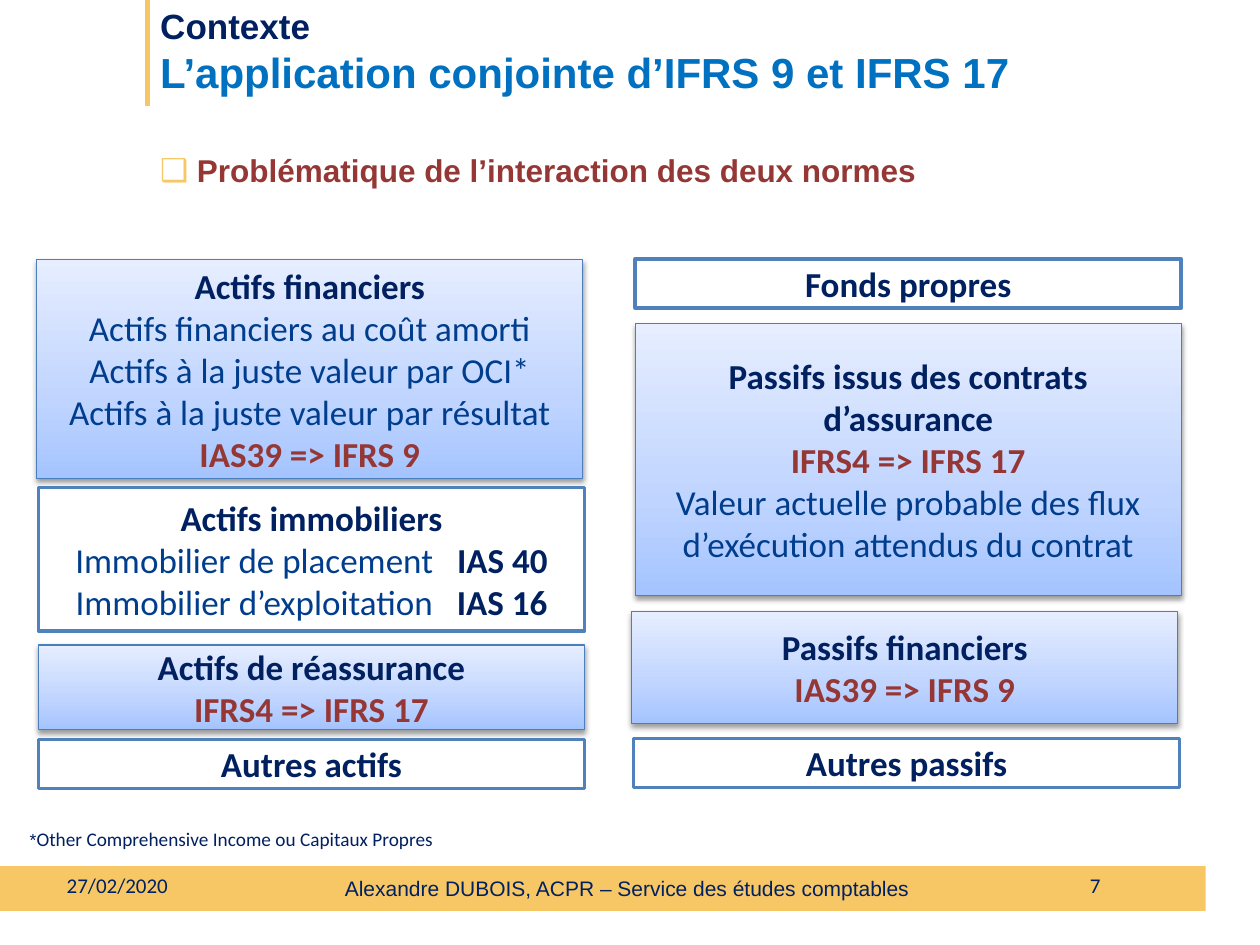
from copy import deepcopy
from dataclasses import dataclass

from lxml import etree
from pptx import Presentation
from pptx.dml.color import RGBColor
from pptx.enum import shapes, text
from pptx.oxml.ns import qn
from pptx.util import Pt


@dataclass(frozen=True)
class Theme:
    navy: str = "002060"
    blue: str = "003D8D"
    sky: str = "0070C0"
    red: str = "953735"
    gold: str = "F7C765"
    white: str = "FFFFFF"
    edge: str = "4F81BD"
    rim: str = "4B7EBC"
    grad: tuple = ((0, "A4C4FF"), (0.35, "BFD4FF"), (1, "E6EEFF"))
    head: str = "Arial"
    body: str = "Calibri"
    title: int = 24
    large: int = 20
    mid: int = 18
    small: int = 12
    note: int = 11
    star: int = 10


T = Theme()


@dataclass(frozen=True)
class Bit:
    """A stretch of text in one style."""
    words: str
    color: str = T.navy
    bold: bool = True
    size: int = T.large
    font: str = T.body
    gap: float = 0  # extra letter spacing


@dataclass(frozen=True)
class Box:
    """A balance sheet block; each line is a tuple of bits."""
    left: float
    top: float
    high: float
    lines: tuple
    shaded: bool = False


def style(run, bit: Bit) -> None:
    font = run.font
    font.name, font.size, font.bold = bit.font, Pt(bit.size), bit.bold
    font.color.rgb = RGBColor.from_string(bit.color)
    if bit.gap:
        run._r.get_or_add_rPr().set("spc", str(round(bit.gap * 100)))


def write(frame, lines: tuple, align=text.PP_ALIGN.LEFT, anchor=text.MSO_ANCHOR.MIDDLE) -> None:
    frame.word_wrap = True
    frame.vertical_anchor = anchor
    for i, line in enumerate(lines):
        para = frame.add_paragraph() if i else frame.paragraphs[0]
        para.alignment = align
        for bit in line:
            run = para.add_run()
            run.text = bit.words
            style(run, bit)


def label(slide, area: tuple, lines: tuple, **opts):
    frame = slide.shapes.add_textbox(*map(Pt, area)).text_frame
    write(frame, lines, **opts)
    return frame


def panel(slide, area: tuple, color: str):
    rect = slide.shapes.add_shape(shapes.MSO_SHAPE.RECTANGLE, *map(Pt, area))
    rect.shadow.inherit = False
    rect.fill.solid()
    rect.fill.fore_color.rgb = RGBColor.from_string(color)
    rect.line.fill.background()
    return rect


def shade(rect) -> None:
    """Three-stop gradient, pale at the top, with a soft shadow below."""
    fill = rect.fill
    fill.gradient()
    fill.gradient_angle = 90
    props = rect._element.spPr
    stops = props.find(".//" + qn("a:gsLst"))
    stops.append(deepcopy(stops[0]))
    for stop, (pos, color) in zip(fill.gradient_stops, T.grad):
        stop.position = pos
        stop.color.rgb = RGBColor.from_string(color)
    glow = etree.SubElement(props.find(qn("a:effectLst")), qn("a:outerShdw"),
                            blurRad=str(Pt(3.1)), dist=str(Pt(1.6)),
                            dir="5400000", rotWithShape="0")
    tint = etree.SubElement(glow, qn("a:srgbClr"), val="000000")
    etree.SubElement(tint, qn("a:alpha"), val="38000")


def block(slide, box: Box) -> None:
    rect = panel(slide, (box.left, box.top, WIDE, box.high), T.white)
    if box.shaded:
        shade(rect)
    rect.line.color.rgb = RGBColor.from_string(T.rim if box.shaded else T.edge)
    rect.line.width = Pt(0.75 if box.shaded else 2)
    write(rect.text_frame, box.lines, align=text.PP_ALIGN.CENTER)


def bullet(para, mark: str, color: str, dent: float) -> None:
    props = para._p.get_or_add_pPr()
    props.set("marL", str(Pt(dent)))
    props.set("indent", str(-Pt(dent)))
    tint = etree.SubElement(props, qn("a:buClr"))
    etree.SubElement(tint, qn("a:srgbClr"), val=color)
    etree.SubElement(props, qn("a:buFont"), typeface=T.head)
    etree.SubElement(props, qn("a:buChar"), char=mark)


def head(words: str) -> tuple:
    return (Bit(words),)


def plain(words: str) -> tuple:
    return (Bit(words, T.blue, False),)


def norm(words: str) -> tuple:
    return (Bit(words, T.red),)


def pair(words: str, code: str) -> tuple:
    return Bit(words, T.blue, False), Bit(" ", T.blue, False, gap=9), Bit(code)


WIDE = 312
BOXES = (
    # Assets
    Box(21, 148.5, 125, (
        head("Actifs financiers"),
        plain("Actifs financiers au coût amorti"),
        plain("Actifs à la juste valeur par OCI*"),
        plain("Actifs à la juste valeur par résultat"),
        norm("IAS39 => IFRS 9")), True),
    Box(22, 278.5, 82, (
        head("Actifs immobiliers"),
        pair("Immobilier de placement", "IAS 40"),
        pair("Immobilier d’exploitation", "IAS 16"))),
    Box(22, 368.5, 48.5, (
        head("Actifs de réassurance"), norm("IFRS4 => IFRS 17")), True),
    Box(22, 422.5, 28, (head("Autres actifs"),)),
    # Liabilities
    Box(363, 148, 28, (head("Fonds propres"),)),
    Box(363, 185, 155.5, (
        head("Passifs issus des contrats d’assurance"),
        norm("IFRS4 => IFRS 17"),
        plain("Valeur actuelle probable des flux d’exécution attendus du contrat")), True),
    Box(361, 349.5, 64, (
        head("Passifs financiers"), norm("IAS39 => IFRS 9")), True),
    Box(362, 422, 28, (head("Autres passifs"),)),
)


def main() -> None:
    deck = Presentation()
    deck.slide_width, deck.slide_height = Pt(720), Pt(540)
    slide = deck.slides.add_slide(deck.slide_layouts[6])

    # Footer band and title rule
    panel(slide, (0, 495, 703, 25.5), T.gold)
    panel(slide, (689, 485.5, 20, 47.5), T.white)
    rule = slide.shapes.add_connector(
        shapes.MSO_CONNECTOR.STRAIGHT, Pt(84.5), Pt(0), Pt(84.5), Pt(60.5))
    rule.line.color.rgb = RGBColor.from_string(T.gold)
    rule.line.width = Pt(2.75)
    etree.SubElement(rule._element.spPr, qn("a:effectLst"))

    # Footer texts
    foot = Bit("Alexandre DUBOIS, ACPR – Service des études comptables",
               bold=False, size=T.small, font=T.head)
    frame = label(slide, (190, 497, 340, 39.5), ((foot,),), anchor=text.MSO_ANCHOR.TOP)
    frame.paragraphs[0].space_before = Pt(2.4)
    date = Bit("27/02/2020", bold=False, size=T.small)
    label(slide, (31, 491, 168, 29), ((date,),))
    page = Bit("7", bold=False, size=T.small)
    label(slide, (468, 491, 168, 29), ((page,),), align=text.PP_ALIGN.RIGHT)

    # Title and subject
    label(slide, (84.5, -2, 521, 62), (
        (Bit("Contexte", font=T.head),),
        (Bit("L’application conjointe d’IFRS 9 et IFRS 17", T.sky, size=T.title, font=T.head),)))
    topic = Bit("Problématique de l’interaction des deux normes", T.red, size=T.mid, font=T.head)
    frame = label(slide, (84.5, 83, 551, 365), ((topic,),), anchor=text.MSO_ANCHOR.TOP)
    frame.paragraphs[0].space_before = Pt(3.6)
    bullet(frame.paragraphs[0], "❑", T.gold, 21)

    # Balance sheet
    for box in BOXES:
        block(slide, box)

    # Footnote
    frame = label(slide, (17, 472.5, 679, 13.5), ((
        Bit("*", bold=False, size=T.star, font=T.head),
        Bit("Other Comprehensive Income ou Capitaux Propres", bold=False, size=T.note)),))
    frame.margin_left = frame.margin_top = frame.margin_right = frame.margin_bottom = 0

    deck.save("out.pptx")


if __name__ == "__main__":
    main()
